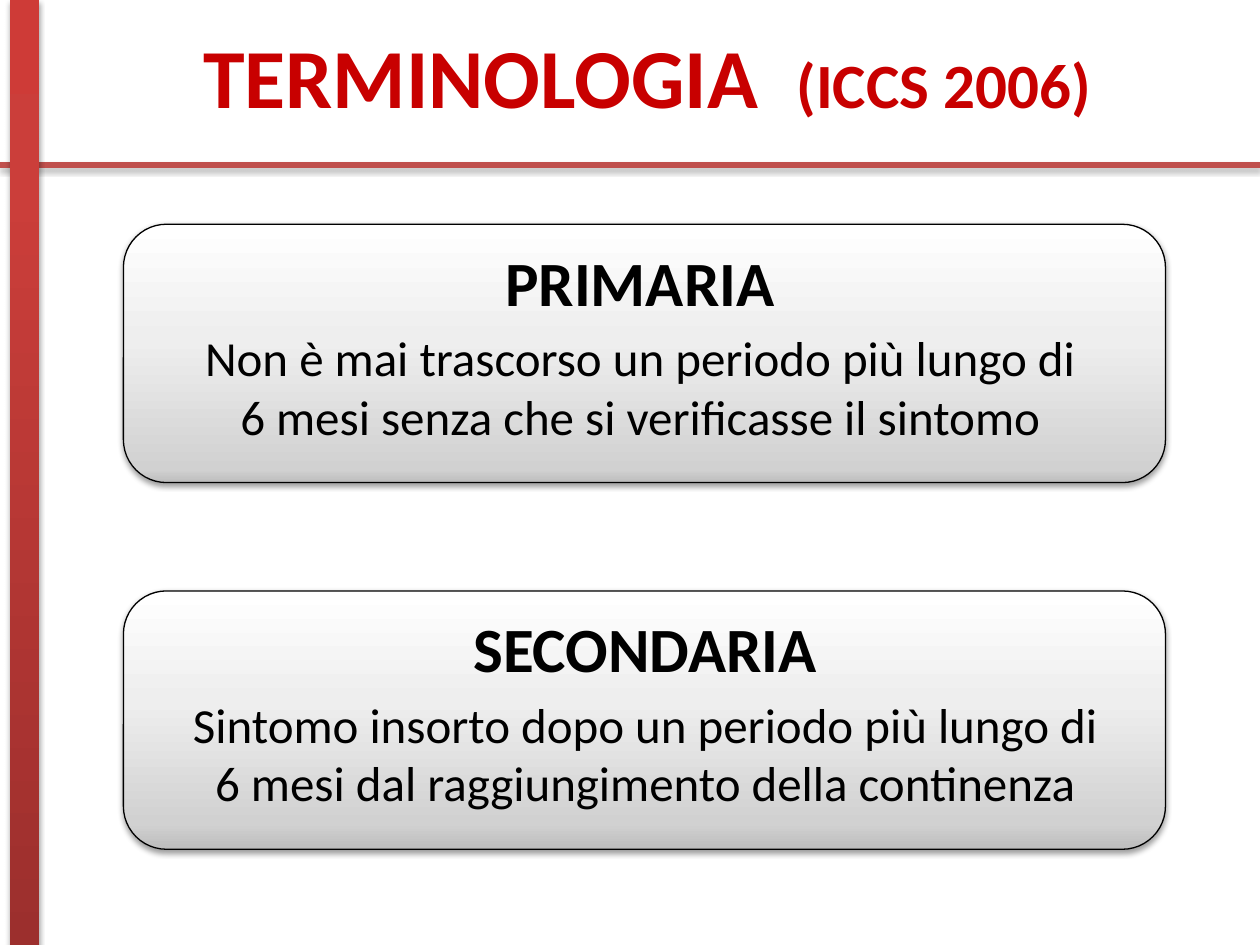
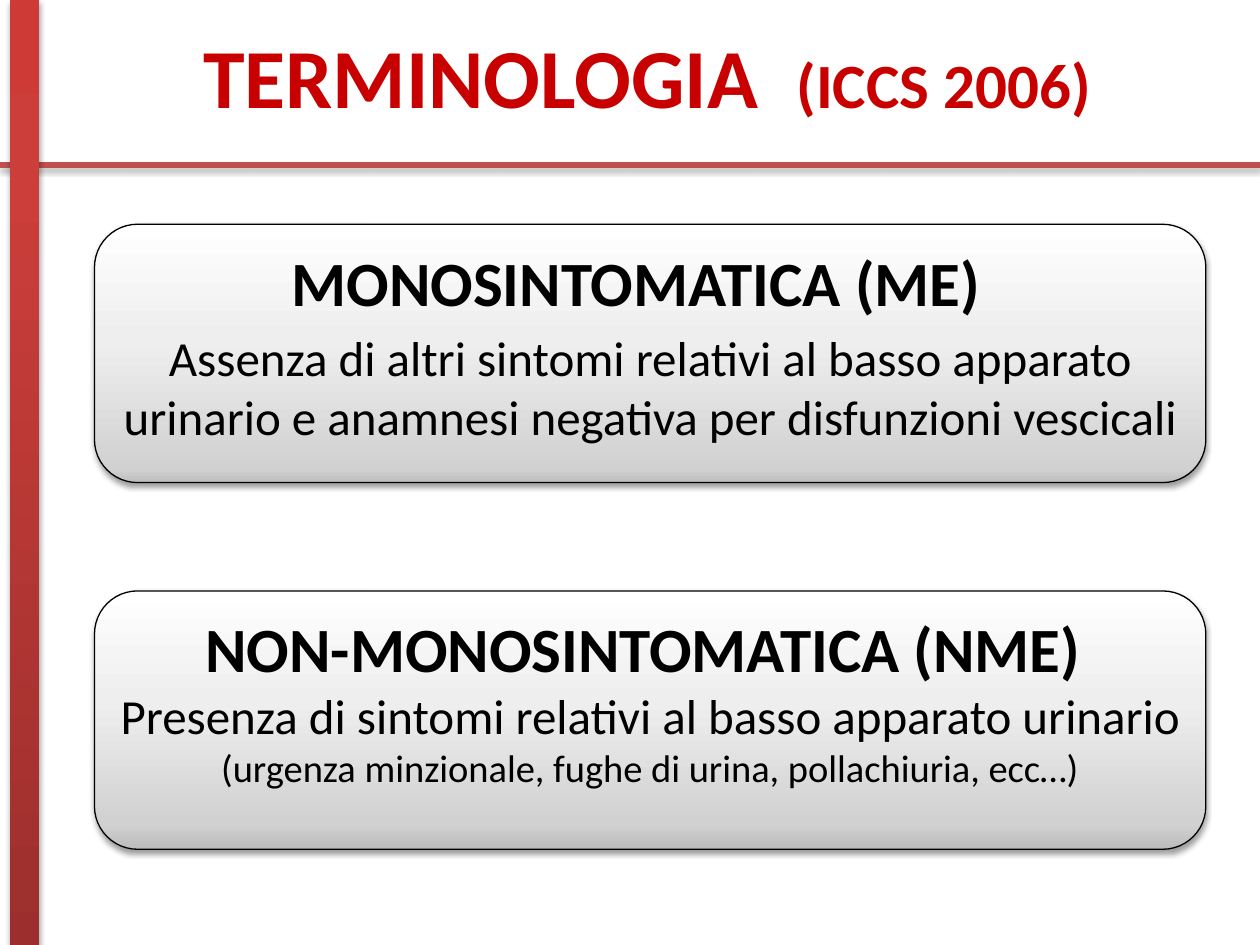
from dataclasses import dataclass

from lxml.etree import SubElement
from pptx import Presentation
from pptx.dml.color import RGBColor
from pptx.enum.shapes import MSO_CONNECTOR, MSO_SHAPE
from pptx.enum.text import MSO_ANCHOR as Anchor, PP_ALIGN as Align
from pptx.oxml.ns import qn
from pptx.util import Inches, Pt

FONT = "Calibri"
COLORS = {"title": "C80000", "rule": "C0504D", "ink": "000000"}
# Gradient stops run from top to bottom: (percent, colour).
BAR_STOPS = [(0, "CE3B37"), (20, "CB3E3A"), (100, "9C2F2D")]
CARD_TOPS = (1.78, 4.69)
CARD_HEIGHT = 2.05
CARD_STOPS = [
    [(0, "FFFFFF"), (45, "EEEEEE"), (95, "D1D1D1"), (100, "BDBDBD")],
    [(0, "FFFFFF"), (43, "EEEEEE"), (90, "D1D1D1"), (100, "BDBDBD")],
]


@dataclass(frozen=True)
class Span:
    text: str
    size: float
    bold: bool = False


@dataclass(frozen=True)
class Card:
    paragraphs: list[list[Span]]
    margin_left: float = 0.1
    margin_right: float = 0.1


@dataclass(frozen=True)
class CardPage:
    left: float
    width: float
    cards: list[Card]


def heading(text: str) -> Span:
    return Span(text, 36, bold=True)


def body(text: str) -> Span:
    return Span(text, 28)


TITLE = [Span("TERMINOLOGIA  ", 48, bold=True), heading("(ICCS 2006)")]
PAGES = [
    CardPage(0.98, 8.27, [
        Card([[heading("PRIMARIA")],
              [body("Non è mai trascorso un periodo più lungo di 6 mesi "
                    "senza che si verificasse il sintomo")]], 0.42, 0.49),
        Card([[heading("SECONDARIA")],
              [body("Sintomo insorto dopo un periodo più lungo di 6 mesi "
                    "dal raggiungimento della continenza")]], 0.34, 0.33),
    ]),
    CardPage(0.75, 8.82, [
        Card([[heading("MONOSINTOMATICA (ME)  ")],
              [body("Assenza di altri sintomi relativi al basso apparato "
                    "urinario e anamnesi negativa per disfunzioni vescicali")]]),
        Card([[heading("NON-MONOSINTOMATICA (NME)  "),
               body("Presenza di sintomi relativi al basso apparato urinario "),
               Span("(urgenza minzionale, fughe di urina, pollachiuria, ecc…)", 22)]]),
    ]),
]


def rgb(name: str) -> RGBColor:
    return RGBColor.from_string(COLORS[name])


def add_shadow(shape, opacity: int, distance: float) -> None:
    """Add a soft shadow straight below; call after fill and line are set."""
    properties = shape._element.spPr
    effects = properties.find(qn("a:effectLst"))
    if effects is None:
        effects = SubElement(properties, qn("a:effectLst"))
    shadow = SubElement(effects, qn("a:outerShdw"), blurRad=str(Pt(3.1)),
                        dist=str(Pt(distance)), dir="5400000", rotWithShape="0")
    color = SubElement(shadow, qn("a:srgbClr"), val=COLORS["ink"])
    SubElement(color, qn("a:alpha"), val=str(opacity * 1000))


def fill_gradient(shape, stops: list[tuple[int, str]]) -> None:
    shape.fill.gradient()
    shape.fill.gradient_angle = 270
    stop_list = shape._element.spPr.find(f".//{qn('a:gsLst')}")
    for stop in list(stop_list):
        stop_list.remove(stop)
    for percent, color in stops:
        stop = SubElement(stop_list, qn("a:gs"), pos=str(percent * 1000))
        SubElement(stop, qn("a:srgbClr"), val=color)


def write_text(frame, paragraphs: list[list[Span]], *, color: str = "ink",
               anchor: Anchor = Anchor.TOP, space_before: float = 0) -> None:
    frame.word_wrap = True
    frame.vertical_anchor = anchor
    for index, spans in enumerate(paragraphs):
        para = frame.add_paragraph() if index else frame.paragraphs[0]
        para.alignment = Align.CENTER
        para.space_before = Pt(space_before if index else 0)
        for span in spans:
            run = para.add_run()
            run.text = span.text
            run.font.name = FONT
            run.font.size = Pt(span.size)
            run.font.bold = span.bold
            run.font.color.rgb = rgb(color)


def draw_frame(page) -> None:
    """Draw the rule, side bar and title shared by all slides."""
    rule = page.shapes.add_connector(MSO_CONNECTOR.STRAIGHT, Inches(0), Inches(1.31),
                                     Inches(10), Inches(1.31))
    rule.line.color.rgb = rgb("rule")
    rule.line.width = Pt(3)
    add_shadow(rule, 35, 1.8)

    bar = page.shapes.add_shape(MSO_SHAPE.RECTANGLE, Inches(0.08), Inches(0),
                                Inches(0.23), Inches(7.5))
    bar.shadow.inherit = False
    fill_gradient(bar, BAR_STOPS)
    bar.line.fill.background()
    add_shadow(bar, 35, 1.8)

    title = page.shapes.add_textbox(Inches(0.39), Inches(-0.03), Inches(9.49), Inches(1.25))
    write_text(title.text_frame, [TITLE], color="title", anchor=Anchor.MIDDLE)


def draw_card(page, card: Card, left: float, top: float, width: float,
              stops: list[tuple[int, str]]) -> None:
    box = page.shapes.add_shape(MSO_SHAPE.ROUNDED_RECTANGLE, Inches(left), Inches(top),
                                Inches(width), Inches(CARD_HEIGHT))
    box.shadow.inherit = False
    fill_gradient(box, stops)
    box.line.color.rgb = rgb("ink")
    box.line.width = Pt(0.75)
    add_shadow(box, 38, 1.6)
    box.text_frame.margin_left = Inches(card.margin_left)
    box.text_frame.margin_right = Inches(card.margin_right)
    write_text(box.text_frame, card.paragraphs, space_before=5)


def main() -> None:
    deck = Presentation()
    deck.slide_width, deck.slide_height = Inches(10), Inches(7.5)
    for content in PAGES:
        page = deck.slides.add_slide(deck.slide_layouts[6])
        draw_frame(page)
        for card, top, stops in zip(content.cards, CARD_TOPS, CARD_STOPS):
            draw_card(page, card, content.left, top, content.width, stops)
    deck.save("out.pptx")


if __name__ == "__main__":
    main()
